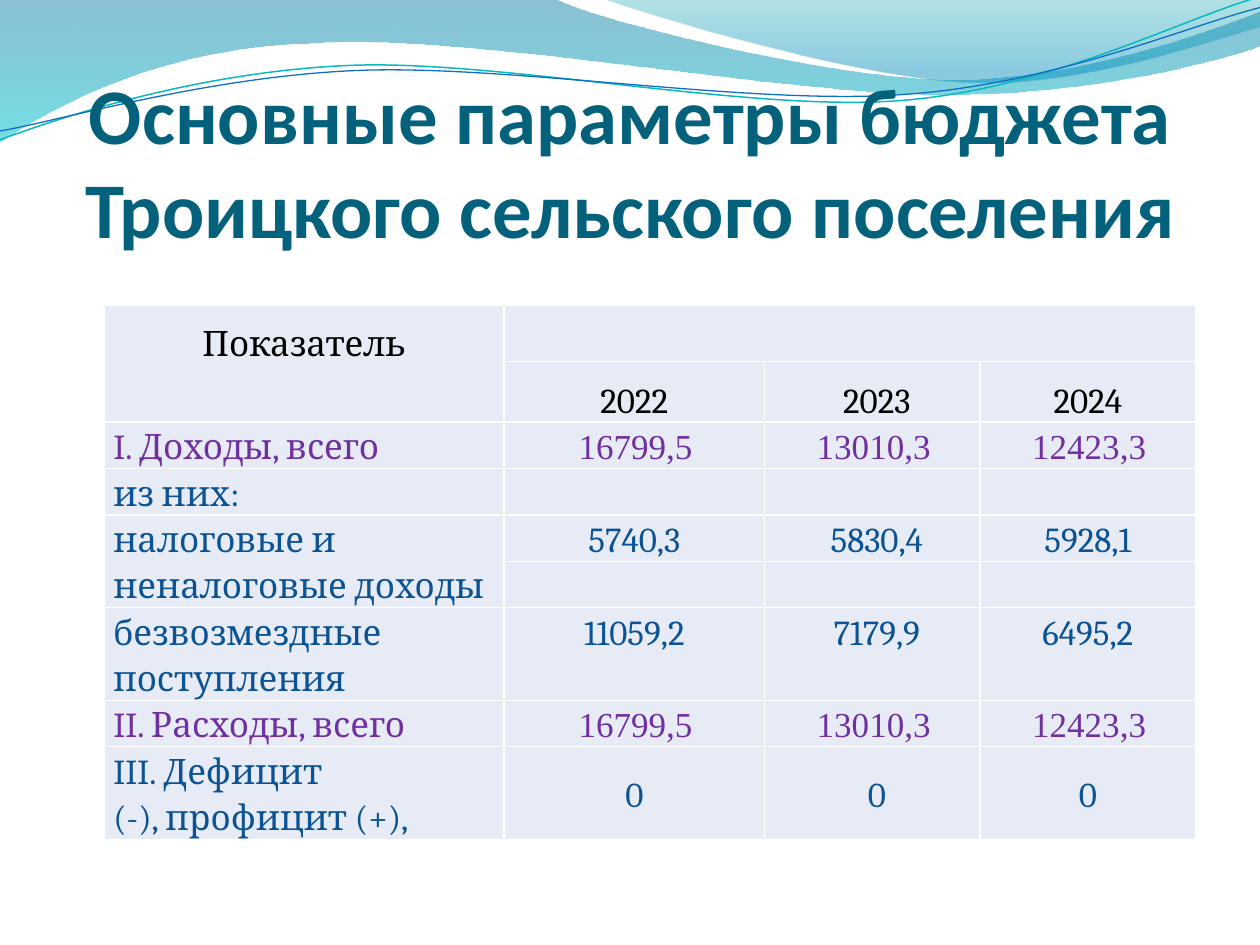
import pptx
import pptx.dml.color
import pptx.enum.text
import pptx.oxml
import pptx.oxml.ns
import pptx.util
from pptx.util import Inches

ALIGN = pptx.enum.text.PP_ALIGN
ANCHOR = pptx.enum.text.MSO_ANCHOR
BLACK, BLUE, PURPLE = "000000", "0B5394", "7030A0"
WHITE, CELL_FILL = "FFFFFF", "E7EBF5"

COLUMN_WIDTHS = [3.17, 2.07, 1.71, 1.71]
# Rows grow to fit their text
ROW_HEIGHTS = [0.45, 0.38, 0.31, 0.31, 0.31, 0.36, 0.64, 0.31, 0.64]
TABLE_ROWS = [
    ["Показатель", "", "", ""],
    ["", "2022", "2023", "2024"],
    ["I. Доходы, всего", "16799,5", "13010,3", "12423,3"],
    ["из них:", "", "", ""],
    ["налоговые и неналоговые доходы", "5740,3", "5830,4", "5928,1"],
    ["", "", "", ""],
    ["безвозмездные поступления", "11059,2", "7179,9", "6495,2"],
    ["II. Расходы, всего", "16799,5", "13010,3", "12423,3"],
    ["III. Дефицит\n(-), профицит (+),", "0", "0", "0"],
]
HEADER_ROWS, TOTAL_ROWS, LAST_ROW = (0, 1), (2, 7), 8

# Each wave is a start point, then steps: two numbers for a line, six for a curve
LEFT_WAVE = [(0, 0), (4.4, -0.01), (4.76, 0.17, 6.64, 0.63, 7.58, 0.63),
             (8.53, 0.63, 9.58, 0.26, 10, 0.09), (10.01, 0.36),
             (9.83, 0.44, 8.7, 0.76, 7.46, 0.75),
             (6.22, 0.75, 3.82, 0.28, 2.57, 0.34),
             (1.29, 0.36, 0.46, 0.83, -0.01, 1.13), (0, 0)]
RIGHT_WAVE = [(4.79, -0.01), (5.09, 0.11, 6.82, 0.62, 7.69, 0.65),
              (8.56, 0.69, 9.61, 0.32, 10, 0.21), (10, 0), (4.79, -0.01)]
TEAL_LINE = [(0, 1.11), (0.48, 0.93, 1.58, 0.57, 2.77, 0.52),
             (3.95, 0.47, 5.93, 0.89, 7.13, 0.8),
             (8.33, 0.71, 9.38, 0.15, 9.98, -0.02)]
BLUE_LINE = [(0, 1.04), (0.47, 0.96, 1.64, 0.61, 2.83, 0.56),
             (4.03, 0.51, 5.97, 0.84, 7.17, 0.75),
             (8.36, 0.67, 9.41, 0.21, 10, 0.06)]


def color(value):
    return pptx.dml.color.RGBColor.from_string(value)


def add_wave(slide, steps, closed):
    """Draw through all points, then bend each triple of lines into a curve."""
    points = [(Inches(step[index]), Inches(step[index + 1]))
              for step in steps for index in range(0, len(step), 2)]
    builder = slide.shapes.build_freeform(*points[0])
    builder.add_line_segments(points[1:], close=closed)
    shape = builder.convert_to_shape()
    shape.shadow.inherit = False
    lines = iter(list(shape._element.iter(pptx.oxml.ns.qn("a:lnTo"))))
    for step in steps[1:]:
        line = next(lines)
        if len(step) == 6:
            curve = pptx.oxml.parse_xml(
                f'<a:cubicBezTo {pptx.oxml.ns.nsdecls("a")}/>')
            line.addprevious(curve)
            for part in (line, next(lines), next(lines)):
                curve.append(part[0])
                part.getparent().remove(part)
    return shape


def add_filled_wave(slide, steps, stops):
    """Each stop is a position, a colour and an opacity in percent."""
    shape = add_wave(slide, steps, True)
    shape.line.fill.background()
    shape.fill.gradient()
    shape.fill.gradient_angle = 270
    for stop, (position, value, _) in zip(shape.fill.gradient_stops, stops):
        stop.position = position
        stop.color.rgb = color(value)
    tag = pptx.oxml.ns.qn("a:srgbClr")
    for element, (_, _, opacity) in zip(list(shape._element.spPr.iter(tag)), stops):
        alpha = pptx.oxml.parse_xml(
            f'<a:alpha {pptx.oxml.ns.nsdecls("a")} val="{opacity * 1000}"/>')
        element.append(alpha)


def add_line_wave(slide, steps, value, width):
    shape = add_wave(slide, steps, False)
    shape.fill.background()
    shape.line.color.rgb = color(value)
    shape.line.width = pptx.util.Pt(width)


def add_run(paragraph, text, font, size, value, bold=False):
    run = paragraph.add_run()
    run.text = text
    run.font.name = font
    run.font.size = pptx.util.Pt(size)
    run.font.bold = bold
    run.font.color.rgb = color(value)


def set_title(slide, text):
    title = slide.shapes.title
    title.left, title.top = Inches(0.5), Inches(0.77)
    title.width, title.height = Inches(9), Inches(1.25)
    frame = title.text_frame
    frame.auto_size = pptx.enum.text.MSO_AUTO_SIZE.NONE
    frame.word_wrap = True
    frame.vertical_anchor = ANCHOR.BOTTOM
    frame.margin_left = frame.margin_right = frame.margin_bottom = 0
    frame.margin_top = Inches(0.05)
    paragraph = frame.paragraphs[0]
    paragraph.alignment = ALIGN.CENTER
    add_run(paragraph, text, "Calibri", 45, "04617B", True)


def style_cell(cell):
    cell.margin_left = cell.margin_right = Inches(0.07)
    cell.margin_top = cell.margin_bottom = 0
    properties = cell._tc.get_or_add_tcPr()
    for side in ("lnL", "lnR", "lnT", "lnB"):
        properties.append(pptx.oxml.parse_xml(
            f'<a:{side} {pptx.oxml.ns.nsdecls("a")} w="12700"><a:solidFill>'
            f'<a:srgbClr val="{WHITE}"/></a:solidFill></a:{side}>'))
    cell.fill.solid()
    cell.fill.fore_color.rgb = color(CELL_FILL)


def write_cell(cell, text, row, column):
    is_header, is_total, is_number = row in HEADER_ROWS, row in TOTAL_ROWS, column > 0
    value = BLACK if is_header else PURPLE if is_total else BLUE
    font = "Times New Roman" if is_total and is_number else "Cambria"
    indent = 0.02 if is_total else 0.07 if column == 2 else 0
    if (row == LAST_ROW) if is_number else (is_total or row == 3):
        cell.vertical_anchor = ANCHOR.MIDDLE
    for index, line in enumerate(text.split("\n")):
        frame = cell.text_frame
        paragraph = frame.add_paragraph() if index else frame.paragraphs[0]
        paragraph.line_spacing = 1.5 if is_header else 1.15
        paragraph.alignment = ALIGN.CENTER if is_header or is_number else ALIGN.LEFT
        if is_number and indent:
            paragraph._p.get_or_add_pPr().set("indent", str(Inches(indent)))
        add_run(paragraph, line, font, 20, value)


def add_budget_table(slide):
    frame = slide.shapes.add_table(
        len(TABLE_ROWS), len(COLUMN_WIDTHS), Inches(0.83), Inches(2.42),
        Inches(sum(COLUMN_WIDTHS)), Inches(sum(ROW_HEIGHTS)))
    table = frame.table
    table.first_row = table.horz_banding = False
    for column, width in zip(table.columns, COLUMN_WIDTHS):
        column.width = Inches(width)
    for row, height in zip(table.rows, ROW_HEIGHTS):
        row.height = Inches(height)
    for row, texts in enumerate(TABLE_ROWS):
        for column, text in enumerate(texts):
            cell = table.cell(row, column)
            style_cell(cell)
            if text:
                write_cell(cell, text, row, column)
    # Merged cells: first heading, years heading, tax income
    for first, last in [((0, 0), (1, 0)), ((0, 1), (0, 3)), ((4, 0), (5, 0))]:
        table.cell(*first).merge(table.cell(*last))


def main():
    presentation = pptx.Presentation()
    presentation.slide_width, presentation.slide_height = Inches(10), Inches(7.5)
    slide = presentation.slides.add_slide(presentation.slide_layouts[5])
    # Wave decoration along the top
    add_filled_wave(slide, LEFT_WAVE, [(0, "0074A1", 45), (1, "00C6CF", 55)])
    add_filled_wave(slide, RIGHT_WAVE, [(0, "00A1A9", 30), (0.8, "008BBF", 45)])
    add_line_wave(slide, TEAL_LINE, "0AB8BF", 0.85)
    add_line_wave(slide, BLUE_LINE, "0F6FC6", 0.75)
    # Title in front of the waves
    set_title(slide, "Основные параметры бюджета Троицкого сельского поселения")
    slide.shapes._spTree.append(slide.shapes.title._element)
    add_budget_table(slide)
    presentation.save("out.pptx")


if __name__ == "__main__":
    main()
